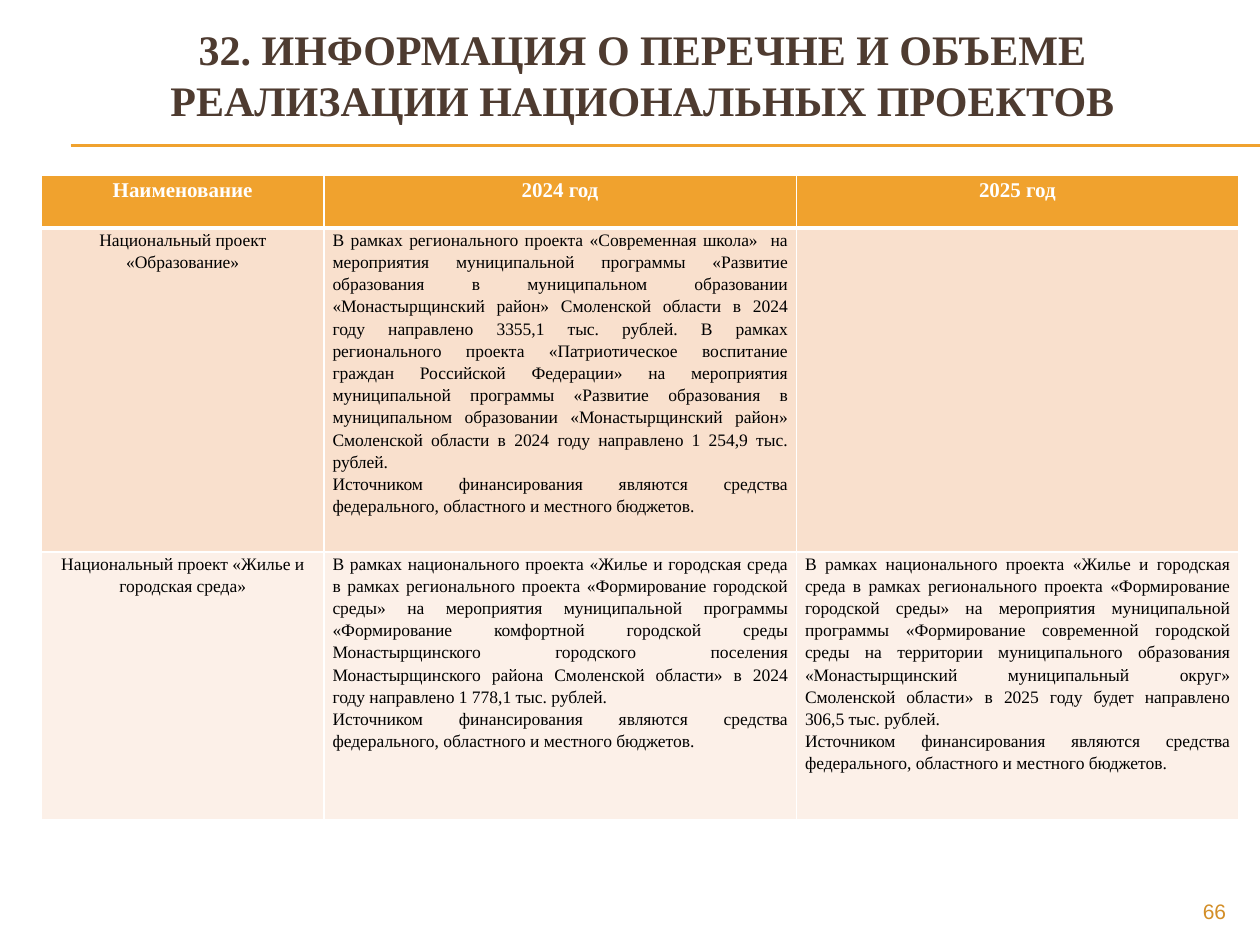
import pptx
import pptx.util
import pptx.dml.color
import pptx.enum.shapes
import pptx.enum.text
from lxml import etree
from pptx.oxml.ns import qn
from pptx.util import Inches, Pt

HUES = {
    "title": "4E3B30", "gold": "F0A22E", "page": "D38E27", "white": "FFFFFF",
    "black": "000000", "peach": "F9E0CD", "cream": "FCF0E8",
}
ALIGN = pptx.enum.text.PP_ALIGN
ANCHOR = pptx.enum.text.MSO_ANCHOR


def style(para, size, hue, align, face="Times New Roman", bold=False):
    para.alignment = align
    for run in para.runs:
        font = run.font
        font.size, font.name, font.bold = Pt(size), face, bold
        font.color.rgb = pptx.dml.color.RGBColor.from_string(HUES[hue])


def edge(cell, side, width):
    """Draw one white border; side is L, R, T or B."""
    line = etree.SubElement(cell._tc.get_or_add_tcPr(), qn(f"a:ln{side}"), w=str(Pt(width)))
    fill = etree.SubElement(line, qn("a:solidFill"))
    etree.SubElement(fill, qn("a:srgbClr"), val=HUES["white"])


deck = pptx.Presentation()
deck.slide_width, deck.slide_height = Inches(10), Inches(7.5)
slide = deck.slides.add_slide(deck.slide_layouts[5])

# Double rule under the title
for y in (1.15, 1.16):
    rule = slide.shapes.add_connector(
        pptx.enum.shapes.MSO_CONNECTOR.STRAIGHT,
        Inches(0.56), Inches(y), Inches(10), Inches(y))
    rule.line.width = Pt(0.75)
    rule.line.color.rgb = pptx.dml.color.RGBColor.from_string(HUES["gold"])
    etree.SubElement(rule._element.spPr, qn("a:effectLst"))

# Title
title = slide.shapes.title
title.left, title.top = Inches(0.35), Inches(0.13)
title.width, title.height = Inches(9.5), Inches(0.92)
frame = title.text_frame
frame.text = "32. ИНФОРМАЦИЯ О ПЕРЕЧНЕ И ОБЪЕМЕ РЕАЛИЗАЦИИ НАЦИОНАЛЬНЫХ ПРОЕКТОВ"
frame.vertical_anchor = ANCHOR.MIDDLE
frame.word_wrap = True
style(frame.paragraphs[0], 24, "title", ALIGN.CENTER, bold=True)

# Table of national projects
source = ("Источником финансирования являются средства федерального, "
          "областного и местного бюджетов.")
housing = ("В рамках национального проекта «Жилье и городская среда в рамках "
           "регионального проекта «Формирование городской среды» на мероприятия "
           "муниципальной программы «Формирование ")
school = ("на мероприятия муниципальной программы «Развитие образования в "
          "муниципальном образовании «Монастырщинский район» Смоленской области "
          "в 2024 году направлено ")
rows = [
    ["Наименование", "2024 год", "2025 год"],
    ["Национальный проект «Образование»",
     "В рамках регионального проекта «Современная школа»  " + school
     + "3355,1 тыс. рублей. В рамках регионального проекта «Патриотическое "
     "воспитание граждан Российской Федерации» " + school
     + "1 254,9 тыс. рублей.\n" + source,
     ""],
    ["Национальный проект «Жилье и городская среда»",
     housing + "комфортной городской среды Монастырщинского городского поселения "
     "Монастырщинского района Смоленской области» в 2024 году направлено "
     "1 778,1 тыс. рублей.\n" + source,
     housing + "современной городской среды на территории муниципального "
     "образования «Монастырщинский муниципальный округ» Смоленской области» "
     "в 2025 году будет направлено 306,5 тыс. рублей.\n" + source],
]
fills = ["gold", "peach", "cream"]
tops, lows = [1, 3, 1], [3, 1, 1]

table = slide.shapes.add_table(
    3, 3, Inches(0.33), Inches(1.39), Inches(9.5), Inches(5.12)).table
for col, width in zip(table.columns, (2.24, 3.75, 3.51)):
    col.width = Inches(width)
for row, height in zip(table.rows, (0.42, 2.57, 2.13)):
    row.height = Inches(height)

for r, texts in enumerate(rows):
    for c, text in enumerate(texts):
        cell = table.cell(r, c)
        cell.margin_left = cell.margin_right = Inches(0.07)
        cell.margin_top = cell.margin_bottom = 0
        for side, width in zip("LRTB", (1, 1, tops[r], lows[r])):
            edge(cell, side, width)
        cell.fill.solid()
        cell.fill.fore_color.rgb = pptx.dml.color.RGBColor.from_string(HUES[fills[r]])
        cell.text_frame.text = text
        for para in cell.text_frame.paragraphs:
            para.line_spacing = 1.15
            if r == 0:
                style(para, 12, "white", ALIGN.CENTER, bold=True)
            else:
                style(para, 10, "black", ALIGN.JUSTIFY if c else ALIGN.CENTER)

# Page number
page = slide.shapes.add_textbox(Inches(9), Inches(7.08), Inches(0.83), Inches(0.27))
page.text_frame.word_wrap = True
page.text_frame.text = "66"
style(page.text_frame.paragraphs[0], 12, "page", ALIGN.RIGHT, face="Arial")

deck.save("out.pptx")
